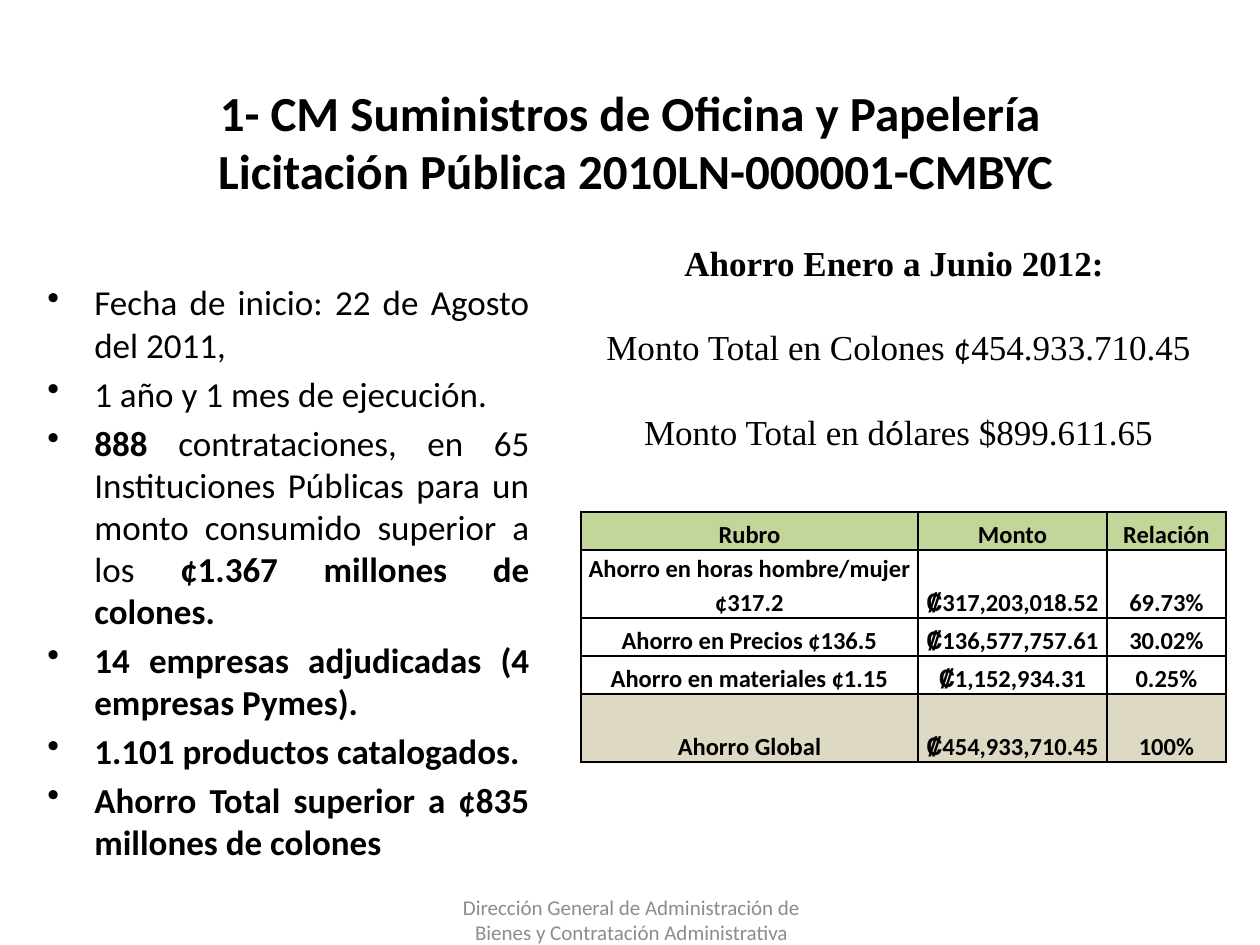
import pptx
import pptx.dml.color
import pptx.enum.text
import pptx.oxml
import pptx.oxml.ns
import pptx.util
from pptx.dml.color import RGBColor

BLACK = RGBColor(0, 0, 0)
GRAY = RGBColor(0x8C, 0x8C, 0x8C)
GREEN = RGBColor(0xC2, 0xD6, 0x9A)
BEIGE = RGBColor(0xDD, 0xD9, 0xC3)
SANS, SERIF, SYMBOL = "Calibri", "Times New Roman", "Roboto"
ALIGN = pptx.enum.text.PP_ALIGN
ANCHOR = pptx.enum.text.MSO_ANCHOR

TITLE = [[("1- CM Suministros de Oficina y Papelería\v Licitación Pública 2010LN-000001-CMBYC", {})]]
FOOTER = [[("Dirección General de Administración de Bienes y Contratación Administrativa", {})]]
BOLD = {"bold": True}
FACTS = [
    [("Fecha de inicio: 22 de Agosto del 2011,", {})],
    [("1 año y 1 mes de ejecución.", {})],
    [("888", BOLD),
     (" contrataciones, en 65 Instituciones Públicas para un monto consumido superior a los ", {}),
     ("¢1.367 millones de colones.", BOLD)],
    [("14 empresas adjudicadas (4 empresas Pymes).", BOLD)],
    [("1.101 productos catalogados.", BOLD)],
    [("Ahorro Total superior a ¢835 millones de colones", BOLD)],
]
SAVINGS = [
    [("Ahorro Enero a Junio 2012: ", BOLD)],
    [("Monto Total en Colones ", {}), ("¢", {"font": SANS}), ("454.933.710.45", {})],
    [("Monto Total en d", {}), ("ó", {"font": SANS}), ("lares $899.611.65", {})],
]
ROWS = [
    (38, GREEN, ("Rubro", "Monto", "Relación")),
    (68, None, ("Ahorro en horas hombre/mujer ¢317.2", "₡317,203,018.52", "69.73%")),
    (38, None, ("Ahorro en Precios ¢136.5", "₡136,577,757.61", "30.02%")),
    (38, None, ("Ahorro en materiales ¢1.15", "₡1,152,934.31", "0.25%")),
    (68, BEIGE, ("Ahorro Global", "₡454,933,710.45", "100%")),
]
COLUMN_WIDTHS = (337, 189, 119)


def px(length):
    return pptx.util.Emu(round(length * 914400 / 126))


def write(frame, paragraphs, size=20, font=SANS, color=BLACK, bold=False,
          align=ALIGN.CENTER, gap=0, line=None, bullet=None):
    for index, runs in enumerate(paragraphs):
        paragraph = frame.paragraphs[0] if index == 0 else frame.add_paragraph()
        paragraph.alignment = align
        if line:
            paragraph.line_spacing = line
        if index and gap:
            paragraph.space_before = pptx.util.Pt(gap)
        if bullet:
            properties = paragraph._p.get_or_add_pPr()
            properties.set("marL", str(px(47)))
            properties.set("indent", str(-px(47)))
            mark = pptx.oxml.parse_xml(
                f'<a:buChar {pptx.oxml.ns.nsdecls("a")} char="{bullet}"/>')
            properties.append(mark)
        for text, changes in runs:
            if "\v" in text:
                first, second = text.split("\v")
                pieces = [first, None, second]
            else:
                pieces = [text]
            for piece in pieces:
                if piece is None:
                    paragraph.add_line_break()
                    continue
                run = paragraph.add_run()
                run.text = piece
                run.font.size = pptx.util.Pt(size)
                run.font.name = changes.get("font", font)
                run.font.bold = changes.get("bold", bold)
                run.font.color.rgb = color


def add_text(slide, box, paragraphs, anchor=ANCHOR.MIDDLE, top_inset=6, **style):
    frame = slide.shapes.add_textbox(*map(px, box)).text_frame
    frame.word_wrap = True
    frame.vertical_anchor = anchor
    frame.margin_top = px(top_inset)
    write(frame, paragraphs, **style)


def add_borders(cell):
    properties = cell._tc.get_or_add_tcPr()
    for side in ("lnL", "lnR", "lnT", "lnB"):
        properties.append(pptx.oxml.parse_xml(
            f'<a:{side} {pptx.oxml.ns.nsdecls("a")} w="12700"><a:solidFill>'
            f'<a:srgbClr val="{BLACK}"/></a:solidFill></a:{side}>'))


def add_savings_table(slide):
    box = (581, 512, sum(COLUMN_WIDTHS), sum(row[0] for row in ROWS))
    table = slide.shapes.add_table(len(ROWS), len(COLUMN_WIDTHS), *map(px, box)).table
    table.first_row = table.horz_banding = False
    for column, width in zip(table.columns, COLUMN_WIDTHS):
        column.width = px(width)
    for row, (height, fill, values) in zip(table.rows, ROWS):
        row.height = px(height)
        for cell, value in zip(row.cells, values):
            cell.vertical_anchor = ANCHOR.BOTTOM
            cell.margin_left = cell.margin_right = px(6)
            cell.margin_top = cell.margin_bottom = 0
            add_borders(cell)
            if fill:
                cell.fill.solid()
                cell.fill.fore_color.rgb = fill
            else:
                cell.fill.background()
            runs = [(value, {})]
            if value.startswith("₡"):
                runs = [("₡", {"font": SYMBOL}), (value[1:], {})]
            write(cell.text_frame, [runs], size=14, bold=True, line=1.15)


def main():
    deck = pptx.Presentation()
    deck.slide_width, deck.slide_height = px(1260), px(945)
    slide = deck.slides.add_slide(deck.slide_layouts[6])
    add_text(slide, (63, 76, 1134, 130), TITLE, size=28, bold=True)
    add_text(slide, (432, 895, 399, 50), FOOTER, size=12, color=GRAY)
    add_text(slide, (35, 224, 507, 655), FACTS, anchor=ANCHOR.TOP, top_inset=57,
             align=ALIGN.JUSTIFY, gap=4, bullet="•")
    add_savings_table(slide)
    add_text(slide, (591, 233, 615, 263), SAVINGS, anchor=ANCHOR.TOP, top_inset=9,
             font=SERIF, gap=24)
    deck.save("out.pptx")


if __name__ == "__main__":
    main()
